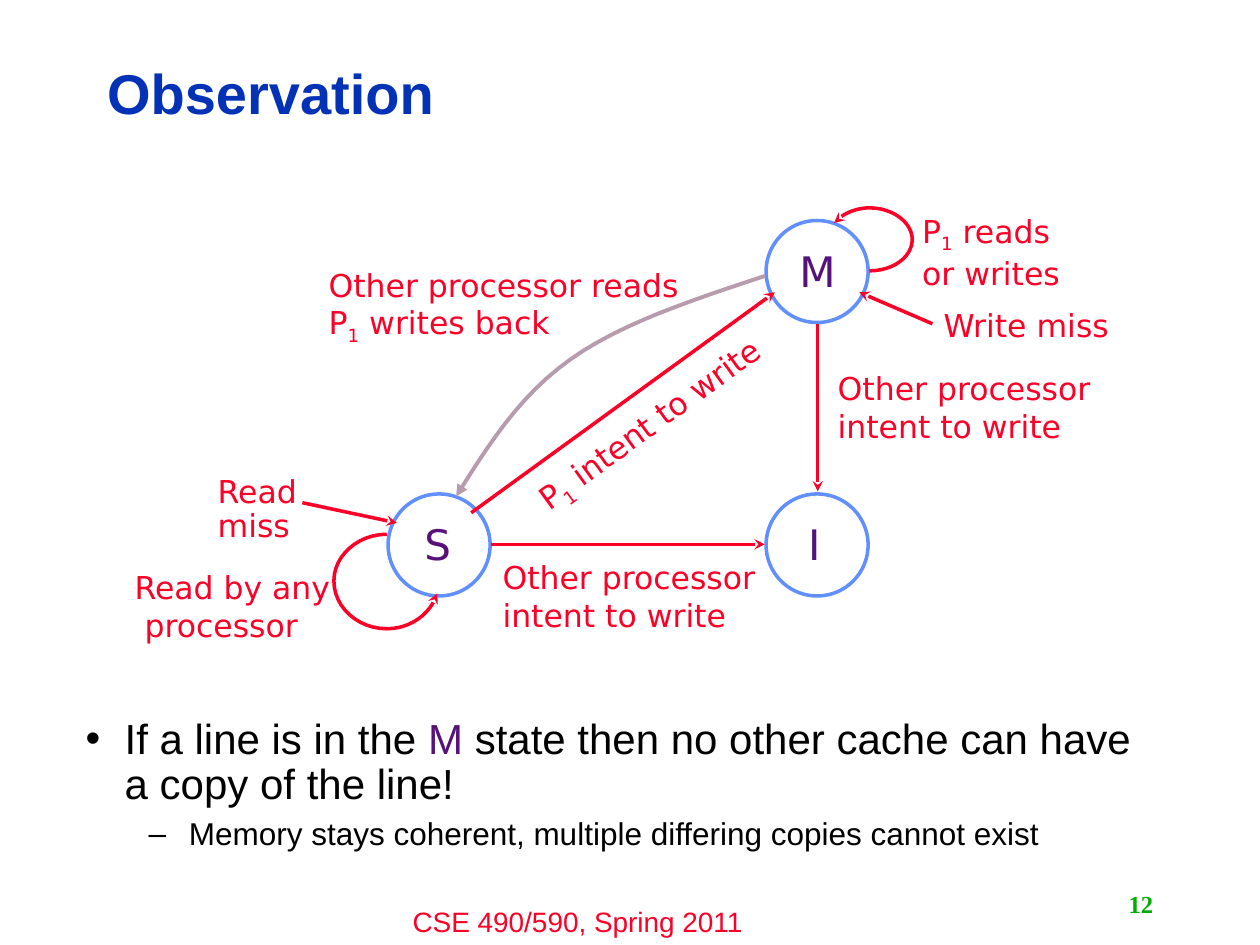
from lxml import etree
from pptx import Presentation, util as u
from pptx.dml.color import RGBColor
from pptx.enum import shapes, text
from pptx.oxml.ns import qn

RED, PURPLE, BLUE = "FC0128", "56127A", "618FFD"
LABEL = {"name": "DejaVu Sans", "size": u.Pt(18), "color": RED}
STATE = {"name": "DejaVu Sans", "size": u.Pt(24), "color": PURPLE}
TITLE = {"name": "Arial", "size": u.Pt(32), "bold": True, "color": "0332B7"}
FOOTER = {"name": "Arial", "size": u.Pt(16), "color": RED}
NUMBER = {"name": "Times New Roman", "size": u.Pt(14), "bold": True, "color": "00AE00"}

DIAMETER = 0.81
states = [
    ("M", 6.08, 1.75, 0.48),
    ("S", 3.08, 3.92, 0.43),
    ("I", 6.08, 3.92, 0.34),
]

labels = [
    (["Write miss"], (7.39, 2.38, 1.53, 0.4), 0, 1),
    (["Other processor", "intent to write"], (6.55, 2.88, 2.21, 0.7), 0, 1),
    ([" Read", " miss"], (1.55, 3.73, 0.92, 0.64), 0, 0.9),
    (["P_1_ intent to write"], (4, 3.15, 2.33, 0.4), 324, 1),
    (["Other processor", "intent to write"], (3.89, 4.38, 2.21, 0.7), 0, 1),
    (["Read by any", " processor"], (0.97, 4.46, 1.77, 0.7), 0, 1),
    (["P_1_ reads", "or writes"], (7.22, 1.63, 1.31, 0.7), 0, 1),
    (["Other processor reads", "P_1_ writes back"], (2.51, 2.06, 2.99, 0.7), 0, 1),
]

transitions = [
    ((7.4, 2.57), (6.82, 2.32)),
    ((6.49, 2.57), (6.49, 3.9)),
    ((2.4, 3.99), (3.15, 4.15)),
    ((3.74, 4.07), (6.15, 2.32)),
    ((3.9, 4.32), (6.07, 4.32)),
]

curves = [
    ([(3.47, 4.71), (3.42, 4.87), (3.26, 4.99), (3.07, 4.99), (2.84, 4.99),
      (2.65, 4.82), (2.65, 4.61), (2.65, 4.41), (2.84, 4.24), (3.07, 4.24)],
     RED, 2, "stealth"),
    ([(6.62, 1.77), (6.68, 1.7), (6.79, 1.65), (6.9, 1.65), (7.09, 1.65),
      (7.24, 1.77), (7.24, 1.9), (7.24, 2.04), (7.09, 2.15), (6.9, 2.15)],
     RED, 2, "stealth"),
    ([(3.62, 3.94), (3.87, 3.54), (4.12, 3.14), (4.53, 2.85),
      (4.94, 2.56), (5.5, 2.38), (6.07, 2.19)],
     "B69CAC", 2.25, "triangle"),
]

bullets = [
    ("If a line is in the _M_ state then no other cache can have a copy of the line!",
     0, 24, "•", 0.31, 0.31),
    (" Memory stays coherent, multiple differing copies cannot exist",
     1, 18, "–", 0.75, 0.25),
]


def paint(color_format, color):
    color_format.rgb = RGBColor.from_string(color)


def style(font, values):
    for key, value in values.items():
        if key == "color":
            paint(font.color, value)
        else:
            setattr(font, key, value)


def place(part, box):
    for key, value in zip(("left", "top", "width", "height"), box):
        setattr(part, key, u.Inches(value))


def write(paragraph, words, values, marked=None):
    for index, piece in enumerate(words.split("_")):
        run = paragraph.add_run()
        run.text = piece
        style(run.font, values)
        if index % 2 and marked:
            style(run.font, marked)
        elif index % 2:
            run.font._element.set("baseline", "-25000")


def add_label(slide, lines, box, values, turn=0, spacing=1, align=text.PP_ALIGN.LEFT, wrap=False):
    label = slide.shapes.add_textbox(*map(u.Inches, box))
    label.rotation = turn
    frame = label.text_frame
    frame.word_wrap = wrap
    for index, line in enumerate(lines):
        paragraph = frame.add_paragraph() if index else frame.paragraphs[0]
        paragraph.alignment = align
        paragraph.line_spacing = spacing
        write(paragraph, line, values)
    return frame


def draw_line(part, color, width, end=None, head="stealth"):
    paint_line = part.line
    paint_line.width = u.Pt(width)
    paint_line.fill.solid()
    paint(paint_line.color, color)
    if end:
        etree.SubElement(part.line._get_or_add_ln(), qn(f"a:{end}"), type=head)


def bezier(points, steps=12):
    yield points[0]
    for start in range(0, len(points) - 1, 3):
        a, b, c, d = points[start:start + 4]
        for step in range(1, steps + 1):
            t = step / steps
            s = 1 - t
            yield tuple(s**3 * p + 3 * s * s * t * q + 3 * s * t * t * r + t**3 * v
                        for p, q, r, v in zip(a, b, c, d))


def fill_placeholders(slide):
    title = slide.shapes.title
    place(title, (0.75, 0.36, 7.98, 0.81))
    title.text_frame.vertical_anchor = text.MSO_ANCHOR.MIDDLE
    title.text_frame.auto_size = text.MSO_AUTO_SIZE.NONE
    heading = title.text_frame.paragraphs[0]
    heading.alignment = text.PP_ALIGN.LEFT
    heading.line_spacing = 0.9
    write(heading, "Observation", TITLE)

    body = slide.placeholders[1]
    place(body, (0.58, 5.65, 8.75, 1.69))
    frame = body.text_frame
    frame.auto_size = text.MSO_AUTO_SIZE.NONE
    for index, (words, level, size, mark, margin, hang) in enumerate(bullets):
        point = frame.add_paragraph() if index else frame.paragraphs[0]
        point.level = level
        point.line_spacing = 0.9
        point.space_before = u.Pt(size * 0.3)
        write(point, words, {"name": "Arial", "size": u.Pt(size), "color": "000000"},
              {"color": PURPLE})
        properties = point._p.get_or_add_pPr()
        properties.set("marL", str(u.Inches(margin)))
        properties.set("indent", str(-u.Inches(hang)))
        etree.SubElement(properties, qn("a:buChar"), char=mark)


def draw_diagram(slide):
    for name, left, top, width in states:
        circle = slide.shapes.add_shape(
            shapes.MSO_SHAPE.OVAL, *map(u.Inches, (left, top, DIAMETER, DIAMETER)))
        circle.shadow.inherit = False
        circle.fill.solid()
        paint(circle.fill.fore_color, "FFFFFF")
        draw_line(circle, BLUE, 2)
        name_left = left + (DIAMETER - width) / 2
        add_label(slide, [name], (name_left, top + 0.15, width, 0.5), STATE)

    for start, finish in transitions:
        arrow = slide.shapes.add_connector(
            shapes.MSO_CONNECTOR.STRAIGHT, *map(u.Inches, start + finish))
        draw_line(arrow, RED, 2, "tailEnd")
        etree.SubElement(arrow._element.spPr, qn("a:effectLst"))

    for controls, color, width, head in curves:
        first, *rest = [tuple(map(u.Inches, point)) for point in bezier(controls)]
        builder = slide.shapes.build_freeform(*first)
        builder.add_line_segments(rest, close=False)
        curve = builder.convert_to_shape()
        curve.shadow.inherit = False
        curve.fill.background()
        draw_line(curve, color, width, "headEnd", head)

    for lines, box, turn, spacing in labels:
        add_label(slide, lines, box, LABEL, turn, spacing)


def main():
    deck = Presentation()
    deck.slide_width, deck.slide_height = u.Inches(10), u.Inches(7.5)
    slide = deck.slides.add_slide(deck.slide_layouts[1])
    fill_placeholders(slide)
    draw_diagram(slide)
    add_label(slide, ["CSE 490/590, Spring 2011"], (2.92, 7.13, 3.33, 0.37), FOOTER,
              align=text.PP_ALIGN.CENTER, wrap=True)
    number = add_label(slide, ["12"], (7.17, 7.01, 2.08, 0.32), NUMBER,
                       align=text.PP_ALIGN.RIGHT, wrap=True)
    number.vertical_anchor = text.MSO_ANCHOR.MIDDLE
    deck.save("out.pptx")


if __name__ == "__main__":
    main()
